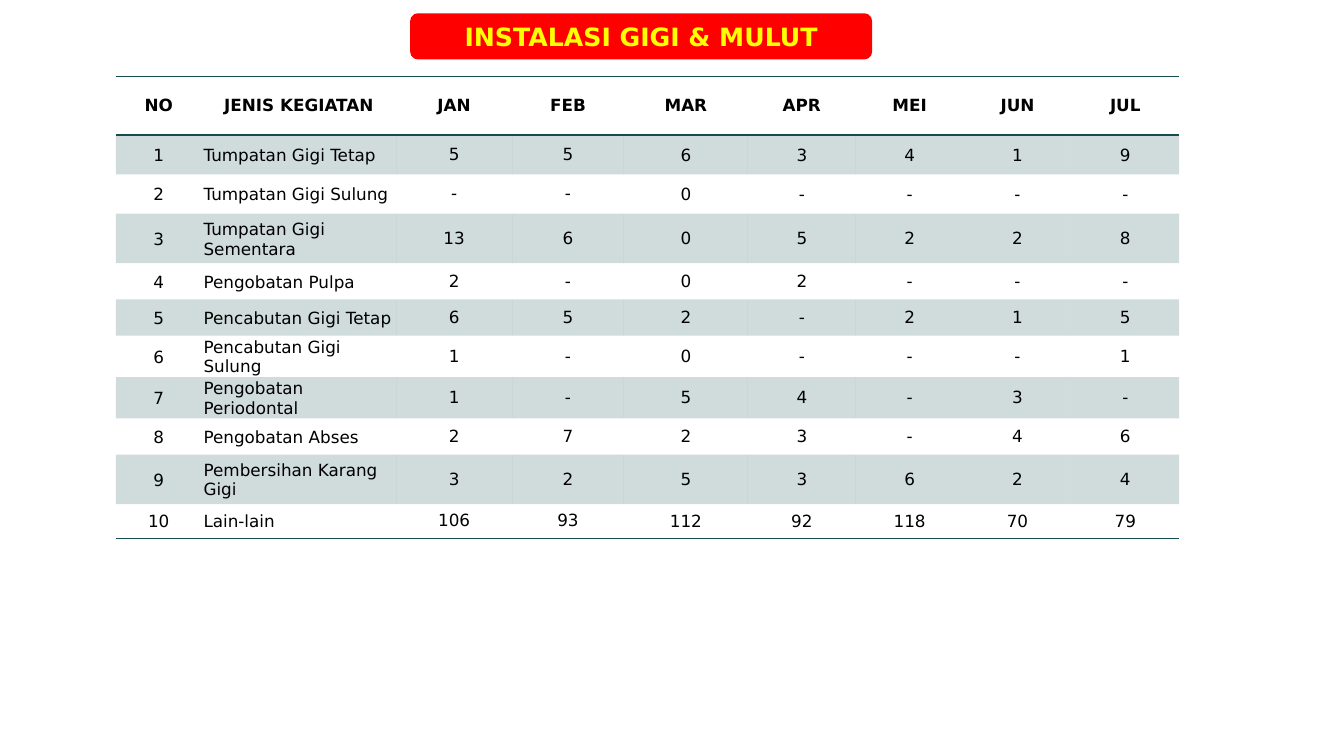
from dataclasses import dataclass

from lxml import etree
from pptx import Presentation
from pptx.dml.color import RGBColor
from pptx.enum import shapes, text
from pptx.oxml import ns
from pptx.util import Pt

FONT = "DejaVu Sans"
RED = RGBColor(0xFF, 0x00, 0x00)
YELLOW = RGBColor(0xFF, 0xFF, 0x00)
BLACK = RGBColor(0x00, 0x00, 0x00)
TEAL = RGBColor(0x16, 0x4B, 0x4F)
PLAIN_TABLE_STYLE = "{2D5ABB26-0587-4C30-8999-92F81FD0307C}"


@dataclass(frozen=True)
class Activity:
    name: str
    counts: str
    height: float


@dataclass(frozen=True)
class Margins:
    left: float
    top: float
    right: float
    bottom: float


HEADINGS = ["NO", "JENIS KEGIATAN", "JAN", "FEB", "MAR", "APR", "MEI", "JUN", "JUL"]
COLUMN_WIDTHS = [61.2, 139, 82.8, 79.9, 88.6] + [77.04] * 4
HEADING_HEIGHT = 41.8
ACTIVITIES = [
    Activity("Tumpatan Gigi Tetap", "5 5 6 3 4 1 9", 28.1),
    Activity("Tumpatan Gigi Sulung", "- - 0 - - - -", 28.1),
    Activity("Tumpatan Gigi Sementara", "13 6 0 5 2 2 8", 35.3),
    Activity("Pengobatan Pulpa", "2 - 0 2 - - -", 25.9),
    Activity("Pencabutan Gigi Tetap", "6 5 2 - 2 1 5", 25.9),
    Activity("Pencabutan Gigi Sulung", "1 - 0 - - - 1", 25.9),
    Activity("Pengobatan Periodontal", "1 - 5 4 - 3 -", 25.9),
    Activity("Pengobatan Abses", "2 7 2 3 - 4 6", 25.9),
    Activity("Pembersihan Karang Gigi", "3 2 5 3 6 2 4", 35.3),
    Activity("Lain-lain", "106 93 112 92 118 70 79", 24.5),
]
HEADING_MARGINS = Margins(14.4, 5.76, 14.4, 5.76)
LABEL_MARGINS = Margins(1.44, 1.44, 1.44, 0)
EARLY_MARGINS = Margins(0, 0, 0, 0)
LATE_MARGINS = Margins(0.72, 0.72, 0.72, 0)
BODY_MARGINS = [LABEL_MARGINS] * 2 + [EARLY_MARGINS] * 2 + [LATE_MARGINS] * 5


def style_paragraph(para, size: float, color: RGBColor, bold: bool, centred: bool = True) -> None:
    para.alignment = text.PP_ALIGN.CENTER if centred else text.PP_ALIGN.LEFT
    para.font.name = FONT
    para.font.size = Pt(size)
    para.font.bold = bold
    para.font.color.rgb = color


def add_title(page) -> None:
    box = page.shapes.add_shape(
        shapes.MSO_SHAPE.ROUNDED_RECTANGLE, Pt(293), Pt(9.5), Pt(330), Pt(33)
    )
    box.shadow.inherit = False
    box.fill.solid()
    box.fill.fore_color.rgb = RED
    box.line.fill.background()
    box.text_frame.text = "INSTALASI GIGI & MULUT"
    box.text_frame.vertical_anchor = text.MSO_ANCHOR.MIDDLE
    style_paragraph(box.text_frame.paragraphs[0], 18, YELLOW, True)


def fill_cell(cell, words: str, margins: Margins, bold: bool, centred: bool) -> None:
    cell.text = words
    cell.vertical_anchor = text.MSO_ANCHOR.MIDDLE
    cell.margin_left, cell.margin_top = Pt(margins.left), Pt(margins.top)
    cell.margin_right, cell.margin_bottom = Pt(margins.right), Pt(margins.bottom)
    style_paragraph(cell.text_frame.paragraphs[0], 12, BLACK, bold, centred)


def shade_cell(cell, banded: bool) -> None:
    if not banded:
        cell.fill.background()
        return
    cell.fill.solid()
    cell.fill.fore_color.rgb = TEAL
    color = cell._tc.tcPr.find(".//" + ns.qn("a:srgbClr"))
    etree.SubElement(color, ns.qn("a:alpha"), val="20000")


def rule_cell(cell, edges: list[str]) -> None:
    for position, edge in enumerate(edges):
        line = etree.Element(ns.qn(f"a:{edge}"), w=str(Pt(1)))
        fill = etree.SubElement(line, ns.qn("a:solidFill"))
        etree.SubElement(fill, ns.qn("a:srgbClr"), val=str(TEAL))
        cell._tc.tcPr.insert(position, line)


def add_activity_table(page) -> None:
    heights = [HEADING_HEIGHT] + [activity.height for activity in ACTIVITIES]
    rows = [HEADINGS] + [
        [str(number), activity.name, *activity.counts.split()]
        for number, activity in enumerate(ACTIVITIES, 1)
    ]
    frame = page.shapes.add_table(
        len(rows), len(HEADINGS), Pt(82.8), Pt(54.7), Pt(sum(COLUMN_WIDTHS)), Pt(sum(heights))
    )
    table = frame.table
    table.first_row = table.horz_banding = False
    table._tbl.tblPr.find(ns.qn("a:tableStyleId")).text = PLAIN_TABLE_STYLE
    for column, width in zip(table.columns, COLUMN_WIDTHS):
        column.width = Pt(width)
    for row, height in zip(table.rows, heights):
        row.height = Pt(height)

    edges = {0: ["lnT", "lnB"], len(rows) - 1: ["lnB"]}
    for r, row in enumerate(rows):
        for c, words in enumerate(row):
            cell = table.cell(r, c)
            heading = r == 0
            margins = HEADING_MARGINS if heading else BODY_MARGINS[c]
            fill_cell(cell, words, margins, heading, heading or c != 1)
            shade_cell(cell, r % 2 == 1)
            rule_cell(cell, edges.get(r, []))


def main() -> None:
    deck = Presentation()
    deck.slide_width, deck.slide_height = Pt(960), Pt(540)
    page = deck.slides.add_slide(deck.slide_layouts[6])
    add_title(page)
    add_activity_table(page)
    deck.save("out.pptx")


if __name__ == "__main__":
    main()
